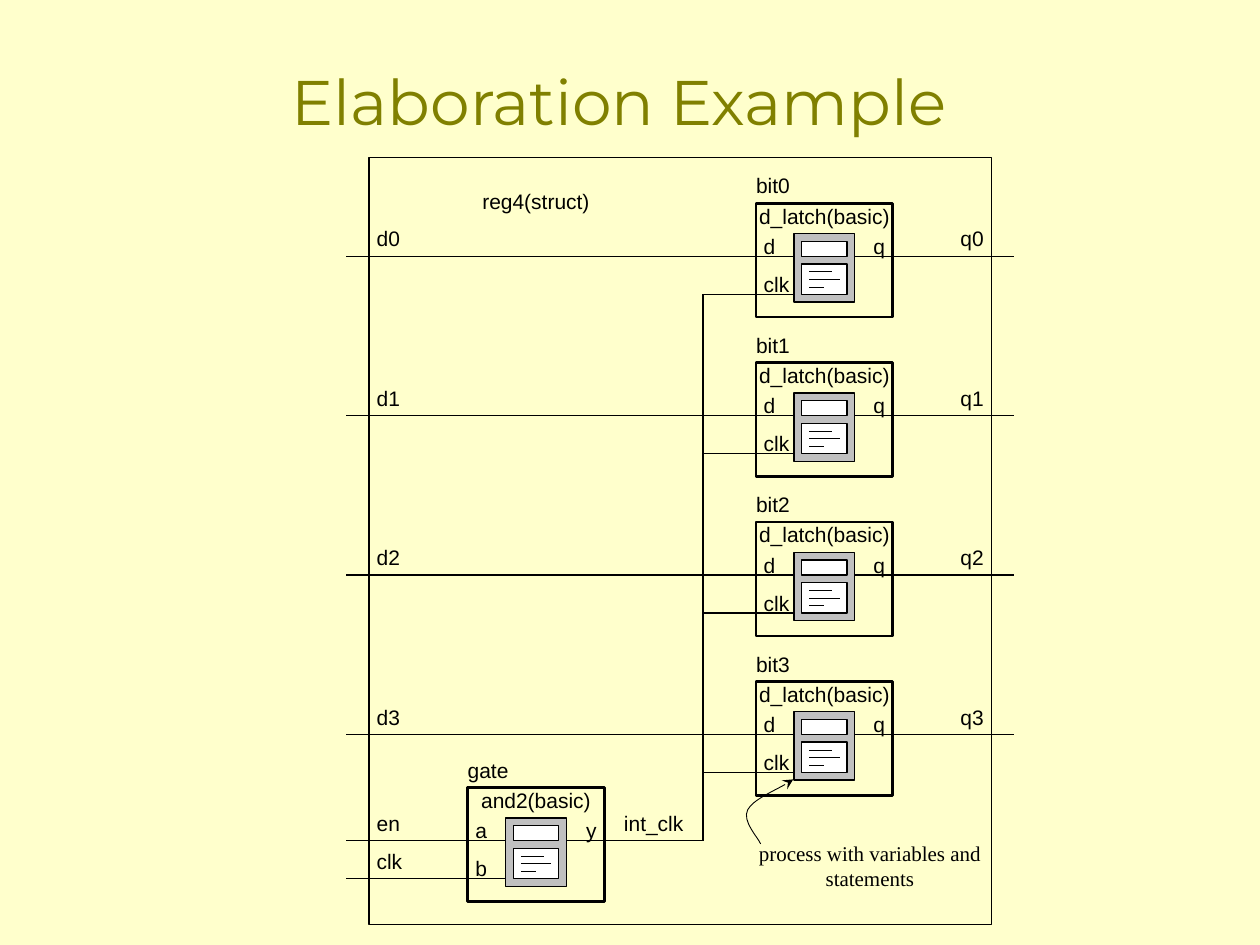
from dataclasses import dataclass

from pptx import Presentation
from pptx import util as u
from pptx.dml.color import RGBColor
from pptx.enum import shapes, text
from pptx.oxml import ns, xmlchemy


@dataclass(frozen=True)
class Theme:
    paper: RGBColor = RGBColor(0xFF, 0xFF, 0xCC)
    olive: RGBColor = RGBColor(0x80, 0x80, 0x00)
    ink: RGBColor = RGBColor(0, 0, 0)
    grey: RGBColor = RGBColor(0xC0, 0xC0, 0xC0)
    white: RGBColor = RGBColor(0xFF, 0xFF, 0xFF)
    head: int = 36
    body: int = 12
    sans: str = "Arial"
    serif: str = "Times New Roman"
    title: str = "Montserrat"


theme = Theme()
UNIT = 0.153  # grid step in cm; the grid starts at the top left of the frame
LEFT, TOP = 7.44, 3.18
PITCH = 21
LEAD, BUS, END = -3, 44, 85


def spot(x, y):
    """Slide position of a grid point."""
    return u.Cm(LEFT + x * UNIT), u.Cm(TOP + y * UNIT)


def write(box, words, font, size, color, align):
    frame = box.text_frame
    frame.text = words
    para = frame.paragraphs[0]
    para.alignment = align
    para.font.name, para.font.size = font, u.Pt(size)
    para.font.color.rgb = color
    return frame


deck = Presentation()
deck.slide_width, deck.slide_height = u.Cm(25.4), u.Cm(19.05)
slide = deck.slides.add_slide(deck.slide_layouts[6])
slide.background.fill.solid()
slide.background.fill.fore_color.rgb = theme.paper
draw = slide.shapes
start, mid, end = text.PP_ALIGN.LEFT, text.PP_ALIGN.CENTER, text.PP_ALIGN.RIGHT

title = draw.add_textbox(u.Cm(1.47), u.Cm(0.43), u.Cm(22.02), u.Cm(3.18))
frame = write(title, "Elaboration Example", theme.title, theme.head, theme.olive, mid)
frame.word_wrap = True
frame.vertical_anchor = text.MSO_ANCHOR.MIDDLE

# Blocks: x, y, name, kind, input ports, output port
blocks = [(51, 6 + PITCH * i, f"bit{i}", "d_latch(basic)", ("d", "clk"), "q")
          for i in range(4)]
blocks.append((13, 83, "gate", "and2(basic)", ("a", "b"), "y"))

# Boxes: x, y, width, height, fill, line width
boxes = [(0, 0, 82, 101, None, 0.75)]
# Wires: x1, y1, x2, y2, line width
wires = [(BUS, 18, BUS, 90, 0.75), (34, 90, BUS, 90, 0.75)]
# Labels: x, y, width, height, words, alignment
labels = [(14, 4, 16, 3, "reg4(struct)", mid), (32, 86, 11, 4, "int_clk", mid)]

for x, y, name, kind, ports, out in blocks:
    boxes += [(x, y, 18, 15, None, 1.5),
              (x + 5, y + 4, 8, 9, theme.grey, 0.75),
              (x + 6, y + 5, 6, 2, theme.white, 0.75),
              (x + 6, y + 8, 6, 4, theme.white, 0.75)]
    wires += [(x + 7, y + 8 + row, x + 7 + size, y + 8 + row, 0.25)
              for row, size in ((1, 3), (2, 4), (3, 2))]
    wires += [(x - 3, y + 7, x + 5, y + 7, 0.75),
              (x - 3, y + 12, x + 5, y + 12, 0.75),
              (x + 13, y + 7, x + 21, y + 7, 0.75)]
    labels += [(x, y - 4, 6, 4, name, start),
               (x, y, 18, 4, kind, mid),
               (x + 1, y + 4, 4, 4, ports[0], start),
               (x + 1, y + 9, 4, 4, ports[1], start),
               (x + 13, y + 4, 4, 4, out, end)]

for i in range(4):
    y = 13 + PITCH * i
    wires += [(LEAD, y, 48, y, 0.75), (72, y, END, y, 0.75),
              (BUS, y + 5, 48, y + 5, 0.75)]
    labels += [(1, y - 4, 6, 4, f"d{i}", start), (75, y - 4, 6, 4, f"q{i}", end)]

for y, name in ((90, "en"), (95, "clk")):
    wires.append((LEAD, y, 10, y, 0.75))
    labels.append((1, y - 4, 6, 4, name, start))

for x, y, wide, high, fill, width in boxes:
    box = draw.add_shape(shapes.MSO_SHAPE.RECTANGLE, *spot(x, y),
                         u.Cm(wide * UNIT), u.Cm(high * UNIT))
    box.shadow.inherit = False
    if fill is None:
        box.fill.background()
    else:
        box.fill.solid()
        box.fill.fore_color.rgb = fill
    box.line.color.rgb = theme.ink
    box.line.width = u.Pt(width)

for x1, y1, x2, y2, width in wires:
    wire = draw.add_connector(shapes.MSO_CONNECTOR.STRAIGHT, *spot(x1, y1), *spot(x2, y2))
    wire.line.color.rgb = theme.ink
    wire.line.width = u.Pt(width)
    wire._element.spPr.append(xmlchemy.OxmlElement("a:effectLst"))

note = (51, 90, 30, 8, "process with variables and statements", mid)
for label in labels + [note]:
    x, y, wide, high, words, align = label
    box = draw.add_textbox(*spot(x, y), u.Cm(wide * UNIT), u.Cm(high * UNIT))
    font = theme.serif if label is note else theme.sans
    frame = write(box, words, font, theme.body, theme.ink, align)
    frame.word_wrap = label is note
    frame.margin_left = frame.margin_right = frame.margin_top = frame.margin_bottom = 0

# Curved arrow from the note to the process of bit3
bends = [(51.3, 89.6), (49.1, 87.4), (49.9, 85.9),
         (50.6, 84.6), (54.7, 82.8), (55.9, 81.9)]
pen = draw.build_freeform(*spot(51.6, 90.4), scale=1.0)
pen.add_line_segments([spot(*bend) for bend in bends], close=False)
arrow = pen.convert_to_shape()
arrow.shadow.inherit = False
arrow.fill.background()
arrow.line.color.rgb = theme.ink
arrow.line.width = u.Pt(0.5)
tip = xmlchemy.OxmlElement("a:tailEnd")
tip.set("type", "stealth")
arrow.line._get_or_add_ln().append(tip)

# Each three straight steps become the control points of one curve
track = next(arrow._element.iter(ns.qn("a:path")))
steps = track.findall(ns.qn("a:lnTo"))
for i in range(0, len(steps), 3):
    curve = xmlchemy.OxmlElement("a:cubicBezTo")
    for step in steps[i:i + 3]:
        curve.append(step[0])
        track.remove(step)
    track.append(curve)

deck.save("out.pptx")
